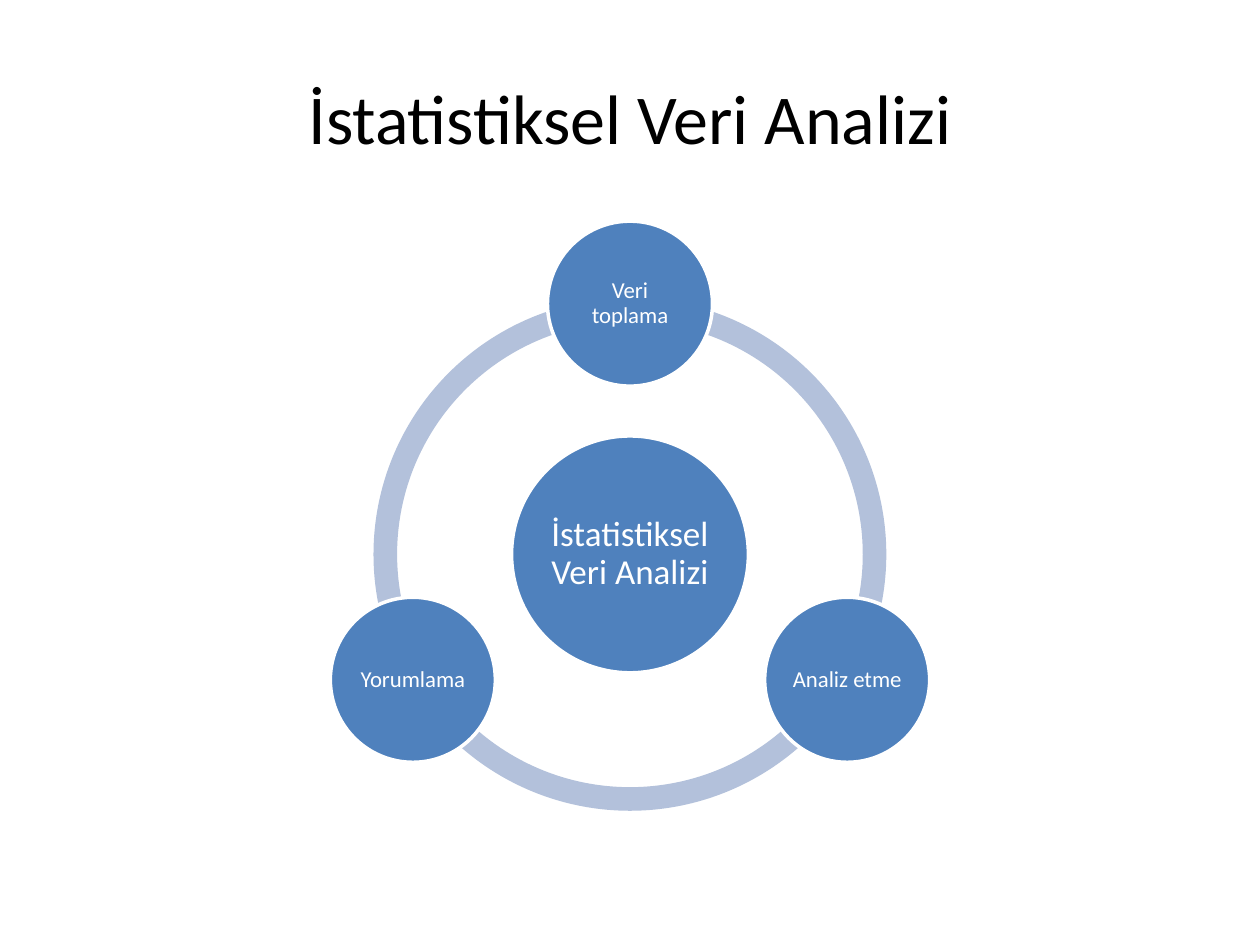
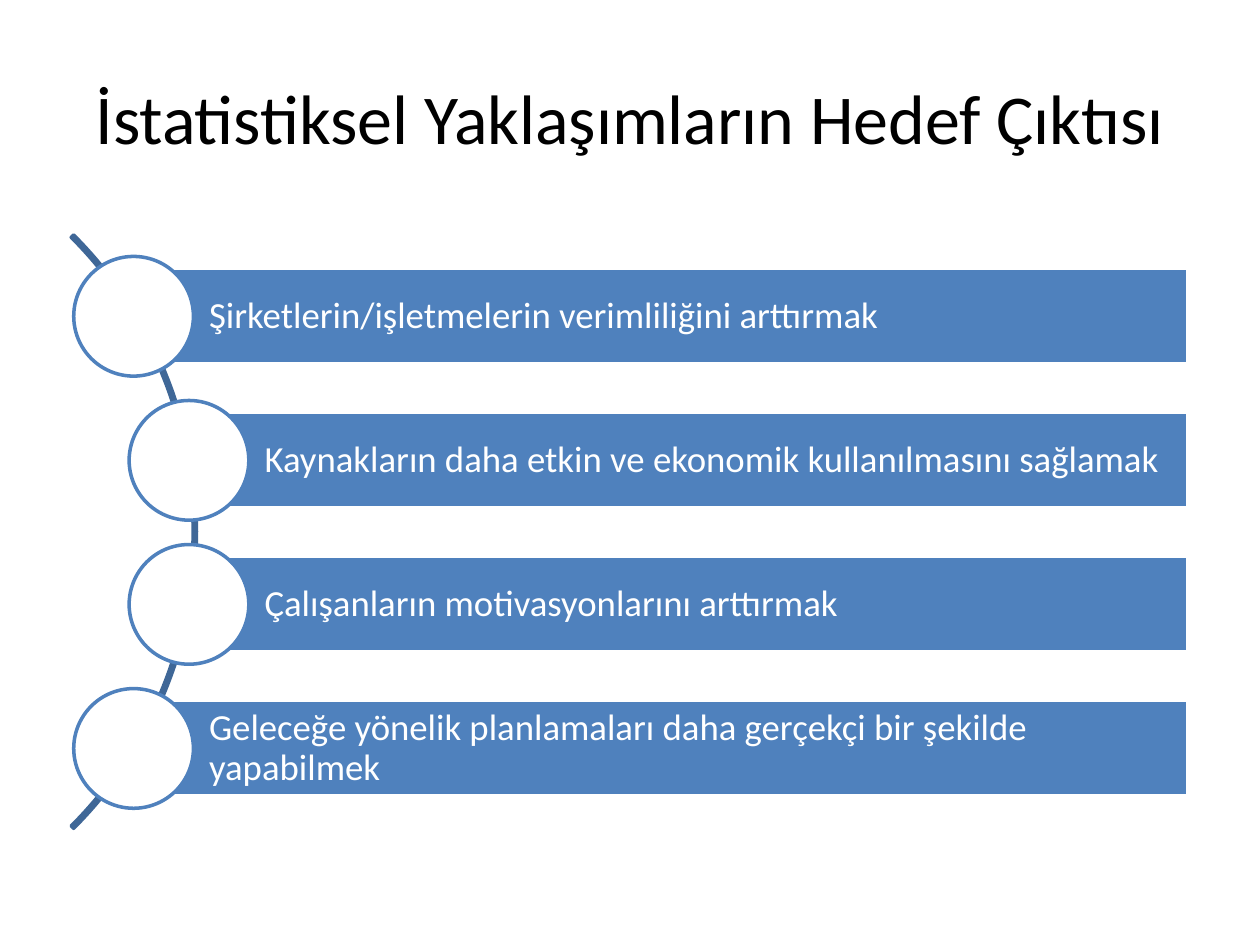
from math import cos, radians, sin

from pptx import Presentation
from pptx.dml.color import RGBColor
from pptx.enum.shapes import MSO_SHAPE
from pptx.enum.text import MSO_ANCHOR, PP_ALIGN
from pptx.util import Inches, Pt

BLACK = RGBColor(0x00, 0x00, 0x00)
WHITE = RGBColor(0xFF, 0xFF, 0xFF)
BLUE = RGBColor(0x4F, 0x81, 0xBD)
DARK_BLUE = RGBColor(0x3F, 0x67, 0x97)
PALE_BLUE = RGBColor(0xB3, 0xC1, 0xDB)
FONT = "Calibri"


def add_figure(page, kind, left, top, width, height, fill=None, line=None):
    """Add a preset shape without shadow; no colour means no fill or line."""
    figure = page.shapes.add_shape(
        kind, Inches(left), Inches(top), Inches(width), Inches(height))
    figure.shadow.inherit = False
    if fill is None:
        figure.fill.background()
    else:
        figure.fill.solid()
        figure.fill.fore_color.rgb = fill
    if line is None:
        figure.line.fill.background()
    else:
        figure.line.color.rgb = line
        figure.line.width = Pt(2)
    return figure


def write_text(box, text, size, color, align, margins, spacing=0.9):
    """Fill a box with one paragraph; margins are left, top, right, bottom."""
    frame = box.text_frame
    frame.text = text
    frame.word_wrap = True
    frame.vertical_anchor = MSO_ANCHOR.MIDDLE
    (frame.margin_left, frame.margin_top,
     frame.margin_right, frame.margin_bottom) = [Inches(m) for m in margins]
    para = frame.paragraphs[0]
    para.alignment = align
    para.line_spacing = spacing
    font = para.runs[0].font
    font.name = FONT
    font.size = Pt(size)
    font.color.rgb = color


deck = Presentation()
deck.slide_width = Inches(10)
deck.slide_height = Inches(7.5)

pages = []
for title in ["İstatistiksel Veri Analizi",
              "İstatistiksel Yaklaşımların Hedef Çıktısı"]:
    page = deck.slides.add_slide(deck.slide_layouts[6])
    box = page.shapes.add_textbox(Inches(0.5), Inches(0.3), Inches(9), Inches(1.25))
    write_text(box, title, 40, BLACK, PP_ALIGN.CENTER, (0.1, 0.05, 0.1, 0.05), 1.0)
    pages.append(page)
cycle_page, goals_page = pages

# Cycle: three ring segments, a hub and three steps on the ring
CENTER_X, CENTER_Y = 5, 4.4
RING_SIZE = 4.07
ORBIT = 1.99
STEP_ANGLES = [-90, 30, 150]

for start in STEP_ANGLES:
    segment = add_figure(cycle_page, MSO_SHAPE.BLOCK_ARC, CENTER_X - RING_SIZE / 2,
                         CENTER_Y - RING_SIZE / 2, RING_SIZE, RING_SIZE, PALE_BLUE)
    # Arc adjustments count 0.6 per degree
    segment.adjustments[0] = start % 360 * 0.6
    segment.adjustments[1] = (start + 120) % 360 * 0.6
    segment.adjustments[2] = 0.046

circles = [("İstatistiksel Veri Analizi", CENTER_X, CENTER_Y, 1.88, 20, 0.03)]
for step, angle in zip(["Veri toplama", "Analiz etme", "Yorumlama"], STEP_ANGLES):
    circles.append((step, CENTER_X + ORBIT * cos(radians(angle)),
                    CENTER_Y + ORBIT * sin(radians(angle)), 1.31, 13, 0.02))
for text, x, y, size, font_size, margin in circles:
    circle = add_figure(cycle_page, MSO_SHAPE.OVAL, x - size / 2, y - size / 2,
                        size, size, BLUE, WHITE)
    write_text(circle, text, font_size, WHITE, PP_ALIGN.CENTER, [margin] * 4)

# Goals: bars that start at circles along a curve
BAR_RIGHT = 9.43
BAR_HEIGHT = 0.76
FIRST_MIDDLE = 2.51
PITCH = 3.43 / 3
DOT_SIZE = 0.95

curve = add_figure(goals_page, MSO_SHAPE.BLOCK_ARC, -5.1, 0.89, 6.66, 6.66,
                   line=DARK_BLUE)
curve.adjustments[0] = 315 * 0.6
curve.adjustments[1] = 45 * 0.6
curve.adjustments[2] = 0.004

goals = [
    ("Şirketlerin/işletmelerin verimliliğini arttırmak", 1.06),
    ("Kaynakların daha etkin ve ekonomik kullanılmasını sağlamak", 1.5),
    ("Çalışanların motivasyonlarını arttırmak", 1.5),
    ("Geleceğe yönelik planlamaları daha gerçekçi bir şekilde yapabilmek", 1.06),
]
for row, (goal, left) in enumerate(goals):
    middle = FIRST_MIDDLE + row * PITCH
    bar = add_figure(goals_page, MSO_SHAPE.RECTANGLE, left, middle - BAR_HEIGHT / 2,
                     BAR_RIGHT - left, BAR_HEIGHT, BLUE, WHITE)
    write_text(bar, goal, 21, WHITE, PP_ALIGN.LEFT, (0.6, 0.06, 0.06, 0.06))
    add_figure(goals_page, MSO_SHAPE.OVAL, left - DOT_SIZE / 2, middle - DOT_SIZE / 2,
               DOT_SIZE, DOT_SIZE, WHITE, BLUE)

deck.save("out.pptx")
